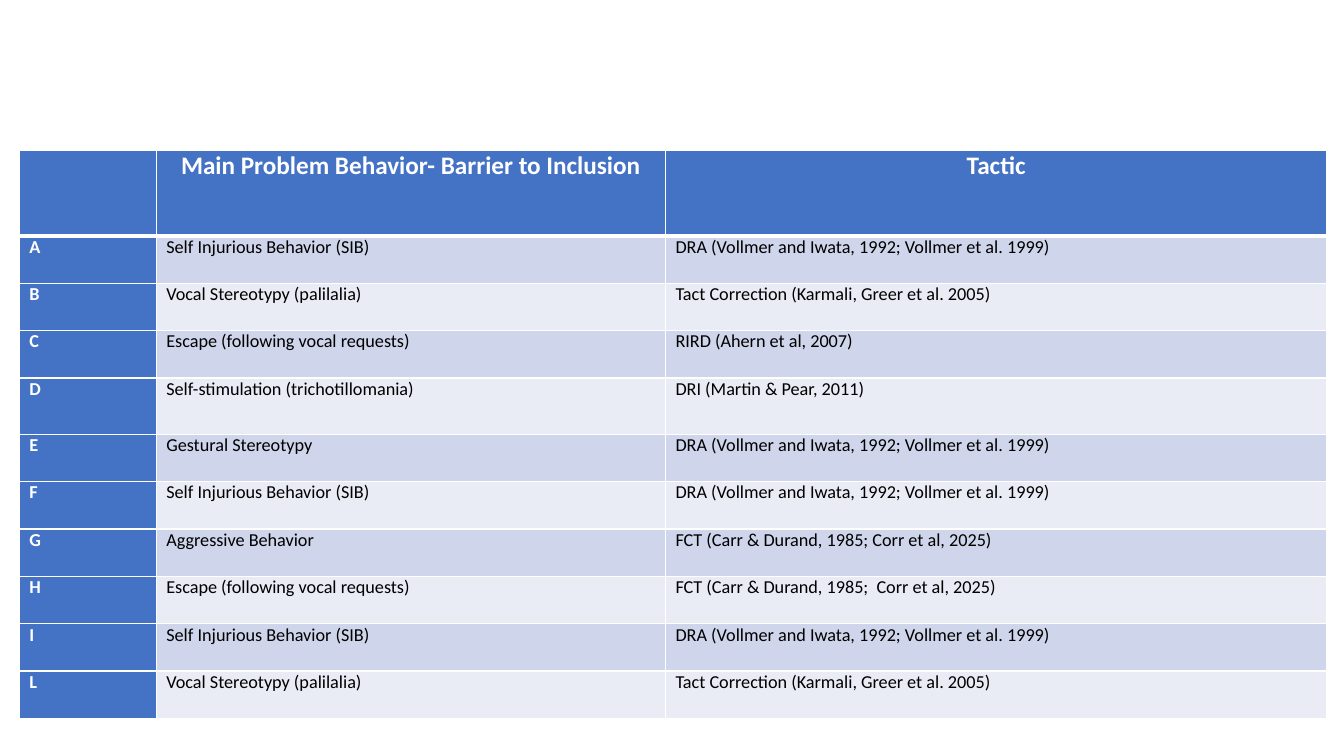
from lxml.etree import SubElement
from pptx import Presentation
from pptx.dml.color import RGBColor
from pptx.enum.text import PP_ALIGN as Align
from pptx.oxml.ns import qn
from pptx.util import Inches, Pt

WHITE, BLACK, BLUE = "FFFFFF", "000000", "4472C4"
BANDS = ["CFD5EA", "E9EBF5"]
COLUMN_WIDTHS = [1.36, 5.05, 6.56]
HEADER_HEIGHT, ROW_HEIGHT, TALL_ROW_HEIGHT = 0.85, 0.47, 0.56

SELF_INJURY = "Self Injurious Behavior (SIB)"
PALILALIA = "Vocal Stereotypy (palilalia)"
ESCAPE = "Escape (following vocal requests)"
DRA = "DRA (Vollmer and Iwata, 1992; Vollmer et al. 1999)"
TACT_CORRECTION = "Tact Correction (Karmali, Greer et al. 2005)"

HEADINGS = ["", "Main Problem Behavior- Barrier to Inclusion", "Tactic"]
STUDENTS = [
    ["A", SELF_INJURY, DRA],
    ["B", PALILALIA, TACT_CORRECTION],
    ["C", ESCAPE, "RIRD (Ahern et al, 2007)"],
    ["D", "Self-stimulation (trichotillomania)", "DRI (Martin & Pear, 2011)"],
    ["E", "Gestural Stereotypy", DRA],
    ["F", SELF_INJURY, DRA],
    ["G", "Aggressive Behavior", "FCT (Carr & Durand, 1985; Corr et al, 2025)"],
    ["H", ESCAPE, "FCT (Carr & Durand, 1985;  Corr et al, 2025)"],
    ["I", SELF_INJURY, DRA],
    ["L", PALILALIA, TACT_CORRECTION],
]
TALL_STUDENT = "D"


def color(value):
    return RGBColor.from_string(value)


def set_borders(cell, widths):
    """Draw white borders; widths maps L, R, T and B to points."""
    properties = cell._tc.get_or_add_tcPr()
    for side, width in widths.items():
        line = SubElement(properties, qn(f"a:ln{side}"), w=str(Pt(width)))
        fill = SubElement(line, qn("a:solidFill"))
        SubElement(fill, qn("a:srgbClr"), val=WHITE)


def fill_cell(cell, text, row, column):
    heading = row == 0
    strong = heading or column == 0
    set_borders(cell, {"L": 1, "R": 1, "T": 3 if row == 1 else 1,
                       "B": 3 if heading else 1})
    cell.fill.solid()
    cell.fill.fore_color.rgb = color(BLUE if strong else BANDS[(row - 1) % 2])
    margins = {"margin_left": 0.1, "margin_right": 0.1,
               "margin_top": 0, "margin_bottom": 0}
    for name, value in margins.items():
        setattr(cell, name, Inches(value))
    para = cell.text_frame.paragraphs[0]
    para.alignment = Align.CENTER if heading else Align.LEFT
    if text:
        span = para.add_run()
        span.text = text
        font_format = {"name": "Calibri", "size": Pt(18 if heading else 13),
                       "bold": strong}
        for name, value in font_format.items():
            setattr(span.font, name, value)
        span.font.color.rgb = color(WHITE if strong else BLACK)


def add_tactics_table(page, left, top):
    rows = [HEADINGS] + STUDENTS
    heights = [HEADER_HEIGHT] + [
        TALL_ROW_HEIGHT if student[0] == TALL_STUDENT else ROW_HEIGHT
        for student in STUDENTS]
    table = page.shapes.add_table(
        len(rows), len(COLUMN_WIDTHS), Inches(left), Inches(top),
        Inches(sum(COLUMN_WIDTHS)), Inches(sum(heights))).table
    for column, width in zip(table.columns, COLUMN_WIDTHS):
        column.width = Inches(width)
    for row, (texts, height) in enumerate(zip(rows, heights)):
        table.rows[row].height = Inches(height)
        for column, text in enumerate(texts):
            fill_cell(table.cell(row, column), text, row, column)


def main():
    deck = Presentation()
    deck.slide_width, deck.slide_height = Inches(13.33), Inches(7.5)
    page = deck.slides.add_slide(deck.slide_layouts[6])
    add_tactics_table(page, 0.19, 1.49)
    deck.save("out.pptx")


if __name__ == "__main__":
    main()
